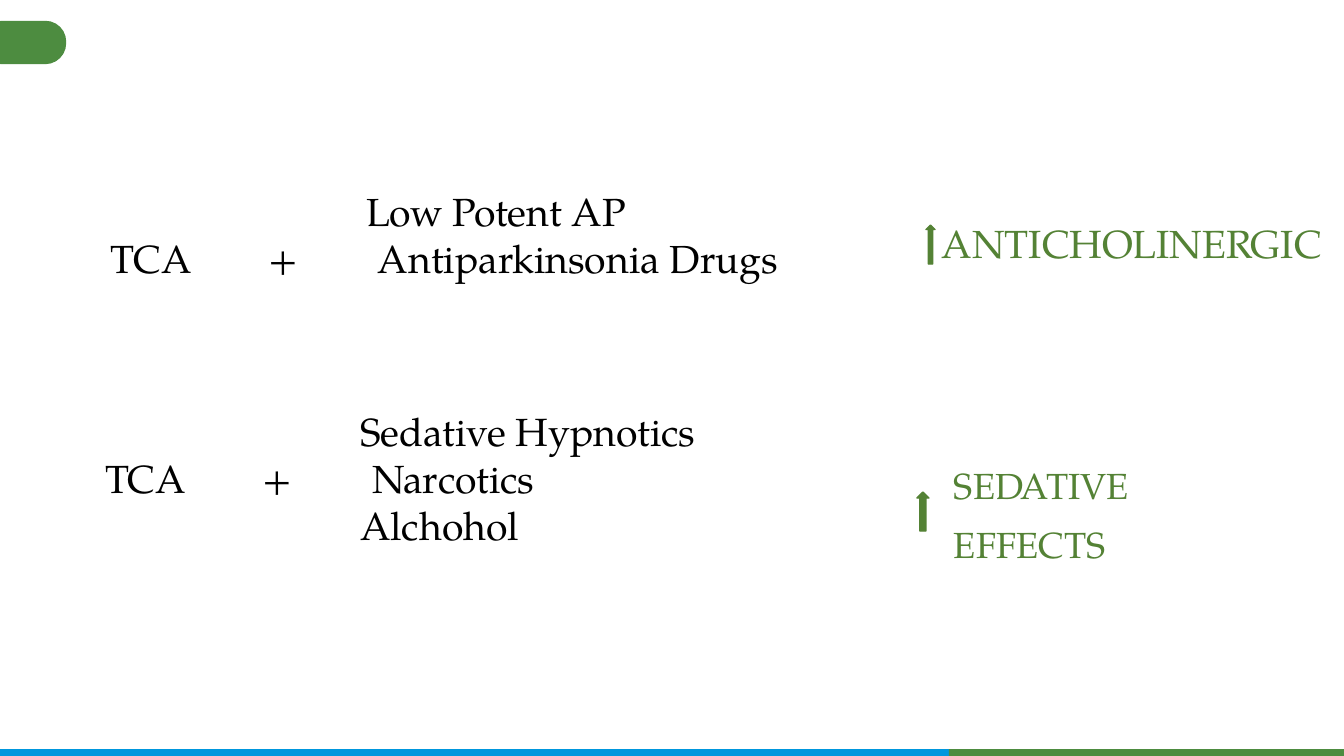
from lxml import etree
from pptx import Presentation
from pptx import util as u
from pptx.dml.color import RGBColor
from pptx.enum import shapes, text
from pptx.oxml.ns import qn

PX = 914400 / 100.8


def px(n):
    return u.Emu(round(n * PX))


def rgb(value):
    return RGBColor.from_string(value)


class Deck:
    """Draws styled elements on the current slide, measured in px."""

    FONT = "TeX Gyre Pagella"
    BLACK, BLUE, GREEN, DARK_GREEN = "000000", "0097DD", "4D8C40", "548235"

    def __init__(self, width, height):
        self.prs = Presentation()
        self.prs.slide_width, self.prs.slide_height = px(width), px(height)
        self.s = self.prs.slides.add_slide(self.prs.slide_layouts[6])

    def shape(self, kind, box, color, outlined=False):
        sp = self.s.shapes.add_shape(kind, *map(px, box))
        sp.shadow.inherit = False
        sp.fill.solid()
        sp.fill.fore_color.rgb = rgb(color)
        if outlined:
            sp.line.color.rgb = rgb(color)
            sp.line.width = u.Pt(1)
        else:
            sp.line.fill.background()
        return sp

    def text_frame(self, box):
        tf = self.s.shapes.add_textbox(*map(px, box)).text_frame
        tf.word_wrap = True
        tf.vertical_anchor = text.MSO_ANCHOR.TOP
        tf.margin_left = tf.margin_right = tf.margin_top = tf.margin_bottom = 0
        return tf

    def paragraph(self, tf, index, words, size, color):
        p = tf.paragraphs[0] if index == 0 else tf.add_paragraph()
        r = p.add_run()
        r.text = words
        r.font.name, r.font.size = self.FONT, u.Pt(size)
        r.font.color.rgb = rgb(color)
        return p

    def interaction(self, left, top, lines):
        """Sets a drug list whose second line carries the TCA and plus sign."""
        tf = self.text_frame((left, top, 800, 47 * len(lines)))
        for i, drug in enumerate(lines):
            words = f"TCA\t+\t{drug}" if i == 1 else drug
            p = self.paragraph(tf, i, words, 28, self.BLACK)
            pr = p._p.get_or_add_pPr()
            if i == 1:
                tabs = etree.SubElement(pr, qn("a:tabLst"))
                for stop in (158, 267):
                    etree.SubElement(tabs, qn("a:tab"), pos=str(px(stop)), algn="l")
            else:
                pr.set("marL", str(px(255)))
                pr.set("indent", "0")

    def effect(self, box, lines, size, arrow):
        """Sets an effect name beside its rising arrow."""
        tf = self.text_frame(box)
        for i, words in enumerate(lines):
            p = self.paragraph(tf, i, words, size, self.DARK_GREEN)
            p.space_after = u.Pt(6)
            if i:
                p.space_before = u.Pt(size * 0.2)
        self.shape(shapes.MSO_SHAPE.UP_ARROW, arrow, self.DARK_GREEN, True)


def main():
    deck = Deck(1344, 756)
    kinds = shapes.MSO_SHAPE
    deck.shape(kinds.RECTANGLE, (0, 749, 949, 9), deck.BLUE)
    deck.shape(kinds.RECTANGLE, (949, 749, 395, 9), deck.GREEN)
    tab = deck.shape(kinds.ROUND_2_SAME_RECTANGLE, (12, 10, 42, 65), deck.GREEN, True)
    tab.rotation = 90
    tab.adjustments[0], tab.adjustments[1] = 0.48, 0

    deck.interaction(111, 187, ["Low Potent AP", "Antiparkinsonia Drugs"])
    deck.effect((942, 219, 402, 56), ["ANTICHOLINERGIC"], 28, (926, 225, 9, 39))
    deck.interaction(105, 407, ["Sedative Hypnotics", "Narcotics", "Alchohol"])
    deck.effect((954, 463, 390, 110), ["SEDATIVE", "EFFECTS"], 25.9, (917, 492, 12, 39))
    deck.prs.save("out.pptx")


if __name__ == "__main__":
    main()
